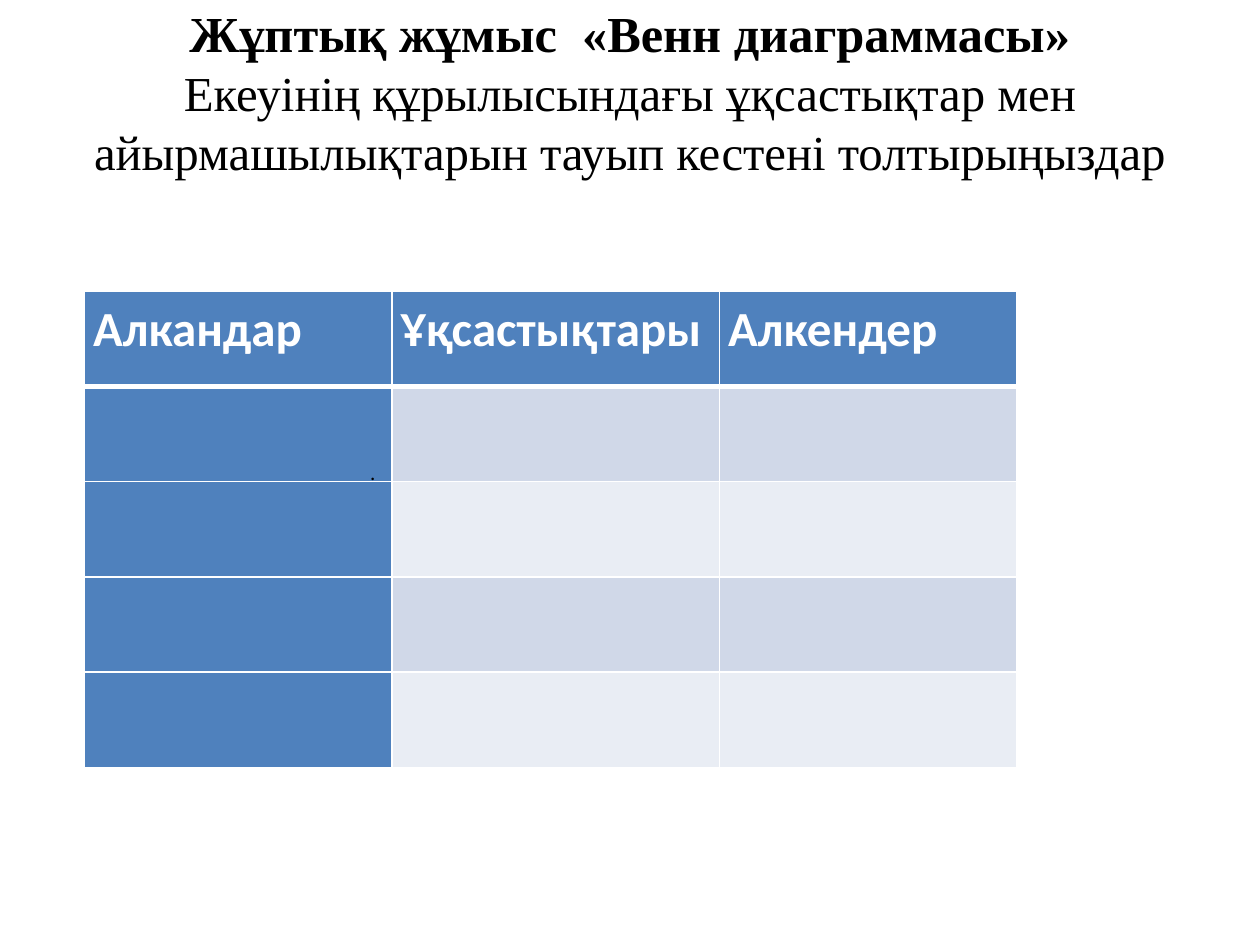
from lxml.etree import SubElement
from pptx import Presentation
from pptx.dml.color import RGBColor
from pptx.enum.text import MSO_ANCHOR as Anchor, MSO_AUTO_SIZE as AutoSize, PP_ALIGN as Align
from pptx.oxml.ns import qn
from pptx.util import Inches, Pt

BLACK = RGBColor(0x00, 0x00, 0x00)
WHITE = RGBColor(0xFF, 0xFF, 0xFF)
BLUE = RGBColor(0x4F, 0x81, 0xBD)
BANDS = (RGBColor(0xD0, 0xD8, 0xE8), RGBColor(0xE9, 0xED, 0xF4))

HEADINGS = ("Алкандар", "Ұқсастықтары", "Алкендер")
COLUMN_WIDTHS = (2.44, 2.6, 2.36)
ROW_COUNT = 5

TITLE_BOX = (0.5, 0.3, 9, 0.85)
TABLE_BOX = (0.67, 2.31, sum(COLUMN_WIDTHS), 3.78)
DOT_BOX = (2.84, 3.6, 0.24, 0.61)


def apply(target, formats):
    for name, value in formats.items():
        setattr(target, name, value)


def add_text(paragraph, text, size, font, color, bold=False):
    run = paragraph.add_run()
    run.text = text
    apply(run.font, {"size": Pt(size), "name": font, "bold": bold})
    run.font.color.rgb = color


def set_borders(cell, widths):
    """Draw white cell edges; widths maps an edge tag to points."""
    properties = cell._tc.get_or_add_tcPr()
    for position, (edge, width) in enumerate(widths.items()):
        line = properties.makeelement(qn(f"a:{edge}"), {"w": str(Pt(width))})
        fill = SubElement(line, qn("a:solidFill"))
        SubElement(fill, qn("a:srgbClr"), val=str(WHITE))
        properties.insert(position, line)


def build_title(slide, box):
    title = slide.shapes.title
    apply(title, dict(zip(("left", "top", "width", "height"), map(Inches, box))))
    frame = title.text_frame
    apply(frame, {"word_wrap": True, "auto_size": AutoSize.NONE,
                  "vertical_anchor": Anchor.MIDDLE})
    heading = frame.paragraphs[0]
    heading.alignment = Align.CENTER
    add_text(heading, "Жұптық жұмыс  «Венн диаграммасы»", 28.8,
             "Times New Roman", BLACK, True)
    heading.add_line_break()
    add_text(heading, "Екеуінің құрылысындағы ұқсастықтар мен "
             "айырмашылықтарын тауып кестені толтырыңыздар", 27.9,
             "Times New Roman", BLACK)


def build_comparison(slide, box):
    table = slide.shapes.add_table(ROW_COUNT, len(HEADINGS), *map(Inches, box)).table
    table.first_col = True
    for column, width in zip(table.columns, COLUMN_WIDTHS):
        column.width = Inches(width)

    # Blue header row and first column, banded body
    for r in range(ROW_COUNT):
        for c in range(len(HEADINGS)):
            cell = table.cell(r, c)
            cell.fill.solid()
            cell.fill.fore_color.rgb = BLUE if r == 0 or c == 0 else BANDS[(r - 1) % 2]
            set_borders(cell, {"lnL": 1, "lnR": 1, "lnT": 3 if r == 1 else 1,
                               "lnB": 3 if r == 0 else 1})

    for c, heading in enumerate(HEADINGS):
        cell = table.cell(0, c)
        apply(cell, {"margin_left": Inches(0.07), "margin_right": Inches(0.07),
                     "margin_top": 0, "margin_bottom": 0})
        paragraph = cell.text_frame.paragraphs[0]
        paragraph.line_spacing = 1.15
        add_text(paragraph, heading, 28, "Calibri", WHITE, True)


def build_dot(slide, box):
    frame = slide.shapes.add_textbox(*map(Inches, box)).text_frame
    apply(frame, {"word_wrap": False, "vertical_anchor": Anchor.TOP})
    add_text(frame.paragraphs[0], ".", 12, "Calibri", BLACK)


def main():
    deck = Presentation()
    apply(deck, {"slide_width": Inches(10), "slide_height": Inches(7.5)})
    slide = deck.slides.add_slide(deck.slide_layouts[5])
    build_title(slide, TITLE_BOX)
    build_comparison(slide, TABLE_BOX)
    build_dot(slide, DOT_BOX)
    deck.save("out.pptx")


if __name__ == "__main__":
    main()
